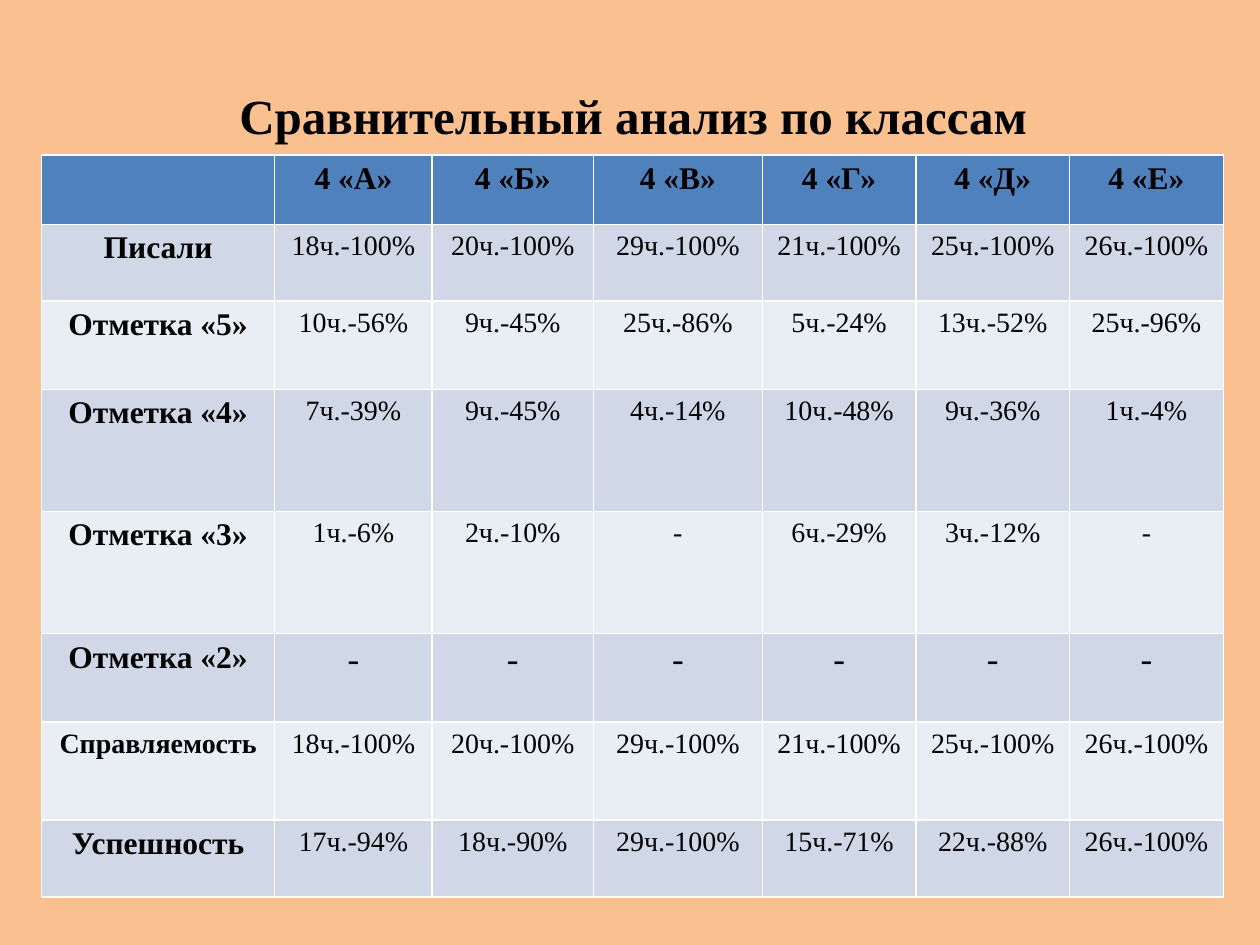
"""Build a slide that compares test results across six classes."""
from dataclasses import dataclass

from lxml import etree
from pptx import Presentation
from pptx.dml.color import RGBColor
from pptx.enum.text import MSO_ANCHOR, PP_ALIGN
from pptx.oxml.ns import qn
from pptx.util import Inches, Pt

CENTER = PP_ALIGN.CENTER
TOP = MSO_ANCHOR.TOP
WIDTH, HEIGHT = 10, 7.5
COLS = [1.85, 1.25, 1.28, 1.34] + [1.22] * 3
ROWS = [0.55, 0.61, 0.7, 0.97, 0.97, 0.7, 0.78, 0.61]
FULL = ["18ч.-100%", "20ч.-100%", "29ч.-100%", "21ч.-100%", "25ч.-100%", "26ч.-100%"]
DATA = [
    [""] + [f"4 «{mark}»" for mark in "АБВГДЕ"],
    ["Писали"] + FULL,
    ["Отметка «5»", "10ч.-56%", "9ч.-45%", "25ч.-86%", "5ч.-24%", "13ч.-52%", "25ч.-96%"],
    ["Отметка «4»", "7ч.-39%", "9ч.-45%", "4ч.-14%", "10ч.-48%", "9ч.-36%", "1ч.-4%"],
    ["Отметка «3»", "1ч.-6%", "2ч.-10%", "-", "6ч.-29%", "3ч.-12%", "-"],
    ["Отметка «2»"] + ["-"] * 6,
    ["Справляемость"] + FULL,
    ["Успешность", "17ч.-94%", "18ч.-90%", "29ч.-100%", "15ч.-71%", "22ч.-88%", "26ч.-100%"],
]


@dataclass(frozen=True)
class Theme:
    """Hold the colours, font and type sizes."""
    back: str = "FAC090"
    head: str = "4F81BD"
    bands: tuple = ("E9EDF4", "D0D8E8")
    line: str = "FFFFFF"
    ink: str = "000000"
    font: str = "Times New Roman"
    title: int = 28
    label: int = 18
    small: int = 16
    dash: int = 20


THEME = Theme()


def paint(fill, color):
    """Give a fill one solid colour."""
    fill.solid()
    fill.fore_color.rgb = RGBColor.from_string(color)


def write(frame, text, size, bold):
    """Set centred text in the theme font."""
    frame.text = text
    para = frame.paragraphs[0]
    para.alignment = CENTER
    for item in [para, *para.runs]:
        font = item.font
        font.name, font.size, font.bold = THEME.font, Pt(size), bold
        font.color.rgb = RGBColor.from_string(THEME.ink)


def edge(cell):
    """Draw a thin line on all four sides of a cell."""
    props = cell._tc.get_or_add_tcPr()
    for side in ("a:lnL", "a:lnR", "a:lnT", "a:lnB"):
        line = etree.SubElement(props, qn(side), w=str(Pt(1)))
        fill = etree.SubElement(line, qn("a:solidFill"))
        etree.SubElement(fill, qn("a:srgbClr"), val=THEME.line)


def style(row, col):
    """Return the type size and weight for a place in the table."""
    if row == 0 or col == 0:
        return (THEME.small if DATA[row][col] == "Справляемость" else THEME.label), True
    dashes = set(DATA[row][1:]) == {"-"}
    return (THEME.dash if dashes else THEME.small), False


def add_title(slide, text):
    """Place the heading above the table."""
    title = slide.shapes.title
    title.left, title.top = Inches(0.055 * WIDTH), Inches(0.084 * HEIGHT)
    title.width, title.height = Inches(0.895 * WIDTH), Inches(0.08 * HEIGHT)
    write(title.text_frame, text, THEME.title, True)
    title.text_frame.vertical_anchor = TOP


def add_grid(slide):
    """Add the table of results."""
    spot = [Inches(n) for n in (0.033 * WIDTH, 0.164 * HEIGHT, sum(COLS), sum(ROWS))]
    table = slide.shapes.add_table(len(ROWS), len(COLS), *spot).table
    for col, width in enumerate(COLS):
        table.columns[col].width = Inches(width)
    for row, height in enumerate(ROWS):
        table.rows[row].height = Inches(height)
        for col, text in enumerate(DATA[row]):
            cell = table.cell(row, col)
            cell.margin_left = cell.margin_right = Inches(0.11)
            edge(cell)
            paint(cell.fill, THEME.bands[row % 2] if row else THEME.head)
            write(cell.text_frame, text, *style(row, col))


def main():
    """Build and save the slide."""
    deck = Presentation()
    deck.slide_width, deck.slide_height = Inches(WIDTH), Inches(HEIGHT)
    slide = deck.slides.add_slide(deck.slide_layouts[5])
    paint(slide.background.fill, THEME.back)
    add_title(slide, "Сравнительный анализ по классам")
    add_grid(slide)
    deck.save("out.pptx")


if __name__ == "__main__":
    main()
